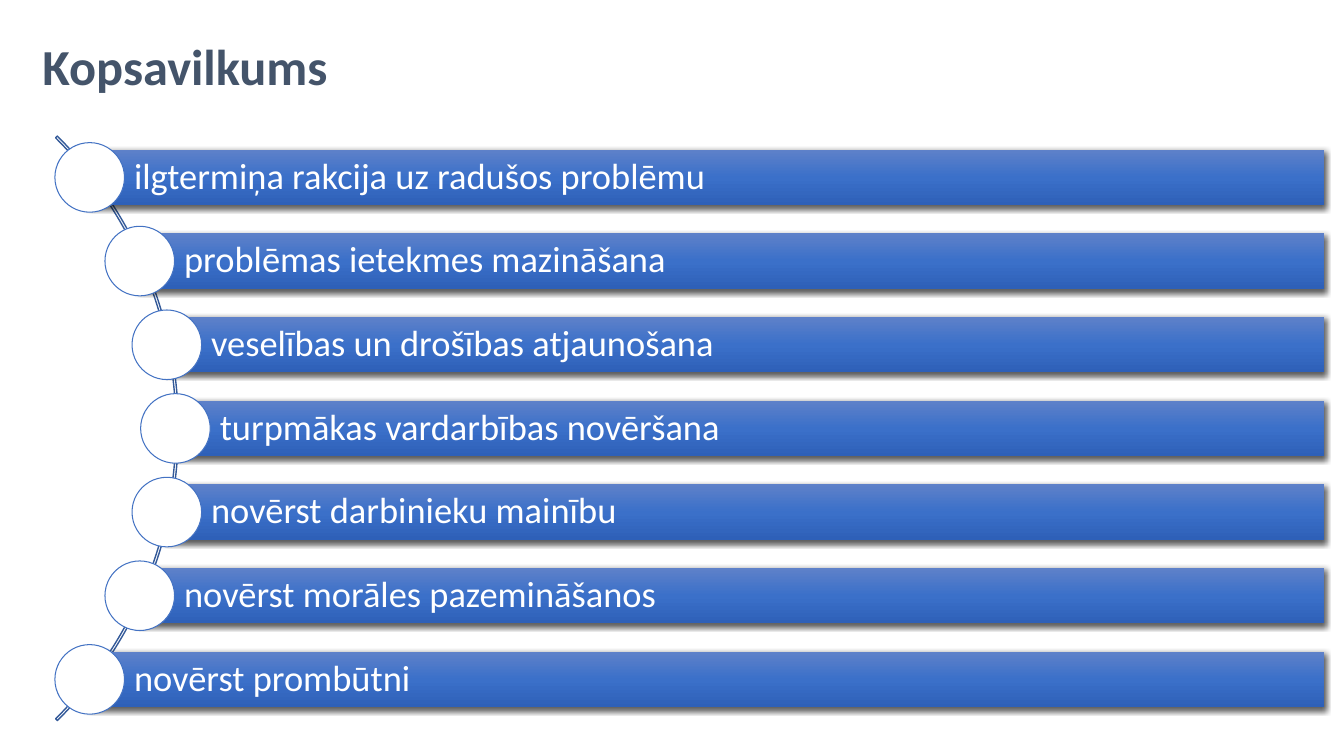
from copy import deepcopy
from dataclasses import dataclass
from math import sqrt

from lxml import etree
from pptx import Presentation
from pptx.dml.color import RGBColor
from pptx.enum.shapes import MSO_SHAPE
from pptx.enum.text import MSO_ANCHOR, PP_ALIGN
from pptx.oxml.ns import qn
from pptx.util import Inches, Pt

RECTANGLE = MSO_SHAPE.RECTANGLE
OVAL = MSO_SHAPE.OVAL
BLOCK_ARC = MSO_SHAPE.BLOCK_ARC
MIDDLE = MSO_ANCHOR.MIDDLE
LEFT = PP_ALIGN.LEFT
TITLE_ONLY = 5

SUMMARY_POINTS = (
    "ilgtermiņa rakcija uz radušos problēmu",
    "problēmas ietekmes mazināšana",
    "veselības un drošības atjaunošana",
    "turpmākas vardarbības novēršana",
    "novērst darbinieku mainību",
    "novērst morāles pazemināšanos",
    "novērst prombūtni",
)

# Geometry in inches
ARC_X, ARC_Y = -2.33, 4.25
ARC_RADIUS = 4.1
BULLET_ORBIT = 4.07
ROW_STEP = 0.83
BAR_RIGHT, BAR_HEIGHT = 13.13, 0.55
BULLET_SIZE = 0.69


@dataclass(frozen=True)
class Theme:
    font: str = "Calibri"
    title_size: int = 36
    bar_size: int = 26
    title: str = "44546A"
    white: str = "FFFFFF"
    arc_line: str = "345A99"
    bullet_line: str = "4372C3"
    shadow: str = "000000"
    bar_gradient: tuple = ((0, "5E81C9"), (0.5, "3B70C9"), (1, "2E60B8"))


class SlideBuilder:
    def __init__(self, slide, theme):
        self.slide = slide
        self.theme = theme

    def shape(self, kind, left, top, width, height):
        shape = self.slide.shapes.add_shape(
            kind, Inches(left), Inches(top), Inches(width), Inches(height))
        shape.shadow.inherit = False
        return shape

    def outline(self, shape, color, width):
        shape.line.color.rgb = RGBColor.from_string(color)
        shape.line.width = Pt(width)

    def set_text(self, shape, text, size, color, margins, bold=False):
        frame = shape.text_frame
        frame.word_wrap = True
        frame.vertical_anchor = MIDDLE
        frame.margin_left, frame.margin_top, frame.margin_right, frame.margin_bottom = (
            Inches(margin) for margin in margins)
        para = frame.paragraphs[0]
        para.text = text
        para.alignment = LEFT
        para.line_spacing = 0.9
        para.font.name = self.theme.font
        para.font.size = Pt(size)
        para.font.bold = bold
        para.font.color.rgb = RGBColor.from_string(color)

    def title(self, text):
        box = self.slide.shapes.title
        box.left, box.top = Inches(0.32), Inches(0.2)
        box.width, box.height = Inches(12.89), Inches(0.97)
        self.set_text(box, text, self.theme.title_size, self.theme.title,
                      (0.1, 0.05, 0.1, 0.05), bold=True)

    def arc(self):
        size = 2 * ARC_RADIUS
        arc = self.shape(BLOCK_ARC, ARC_X - ARC_RADIUS, ARC_Y - ARC_RADIUS, size, size)
        # Start angle, end angle and ring thickness
        for index, value in enumerate((189, 27, 0.003)):
            arc.adjustments[index] = value
        arc.fill.background()
        self.outline(arc, self.theme.arc_line, 1)

    def gradient(self, shape):
        shape.fill.gradient()
        shape.fill.gradient_angle = 270
        stop_list = shape.element.spPr.find(".//" + qn("a:gsLst"))
        stop_list.insert(1, deepcopy(stop_list[0]))
        for stop, (position, color) in zip(shape.fill.gradient_stops,
                                           self.theme.bar_gradient):
            stop.position = position
            stop.color.rgb = RGBColor.from_string(color)

    def drop_shadow(self, shape):
        effects = shape.element.spPr.find(qn("a:effectLst"))
        shadow = etree.SubElement(
            effects, qn("a:outerShdw"), blurRad=str(Pt(4.5)), dist=str(Pt(1.5)),
            dir="5400000", algn="ctr", rotWithShape="0")
        color = etree.SubElement(shadow, qn("a:srgbClr"), val=self.theme.shadow)
        etree.SubElement(color, qn("a:alpha"), val="63000")

    def bar(self, left, center_y, text):
        bar = self.shape(RECTANGLE, left, center_y - BAR_HEIGHT / 2,
                         BAR_RIGHT - left, BAR_HEIGHT)
        self.gradient(bar)
        bar.line.fill.background()
        self.drop_shadow(bar)
        self.set_text(bar, text, self.theme.bar_size, self.theme.white,
                      (0.44, 0.07, 0.07, 0.07))

    def bullet(self, center_x, center_y):
        bullet = self.shape(OVAL, center_x - BULLET_SIZE / 2,
                            center_y - BULLET_SIZE / 2, BULLET_SIZE, BULLET_SIZE)
        bullet.fill.solid()
        bullet.fill.fore_color.rgb = RGBColor.from_string(self.theme.white)
        self.outline(bullet, self.theme.bullet_line, 0.75)


def main():
    deck = Presentation()
    deck.slide_width, deck.slide_height = Inches(13.33), Inches(7.5)
    page = deck.slides.add_slide(deck.slide_layouts[TITLE_ONLY])
    builder = SlideBuilder(page, Theme())

    builder.title("Kopsavilkums")
    builder.arc()
    middle_row = (len(SUMMARY_POINTS) - 1) / 2
    for row, text in enumerate(SUMMARY_POINTS):
        offset = (row - middle_row) * ROW_STEP
        center_x = ARC_X + sqrt(BULLET_ORBIT ** 2 - offset ** 2)
        builder.bar(center_x, ARC_Y + offset, text)
        builder.bullet(center_x, ARC_Y + offset)

    deck.save("out.pptx")


if __name__ == "__main__":
    main()
